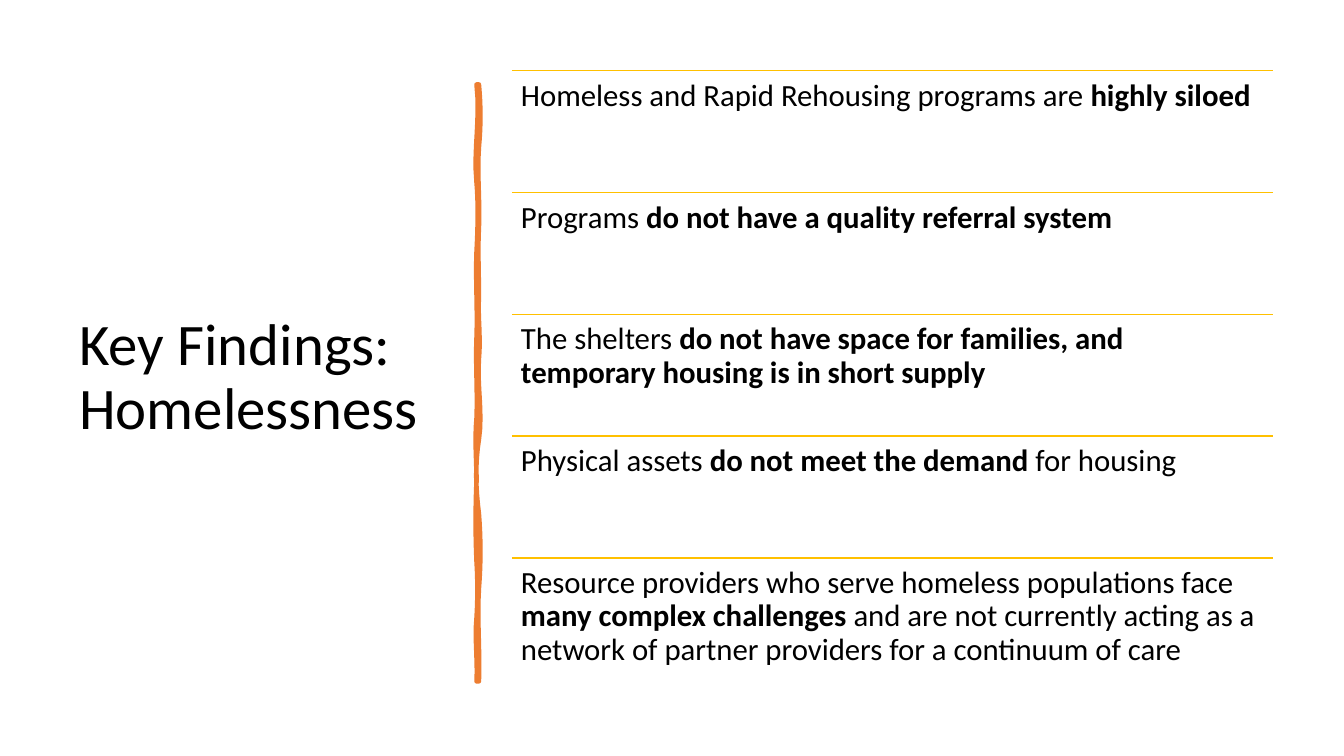
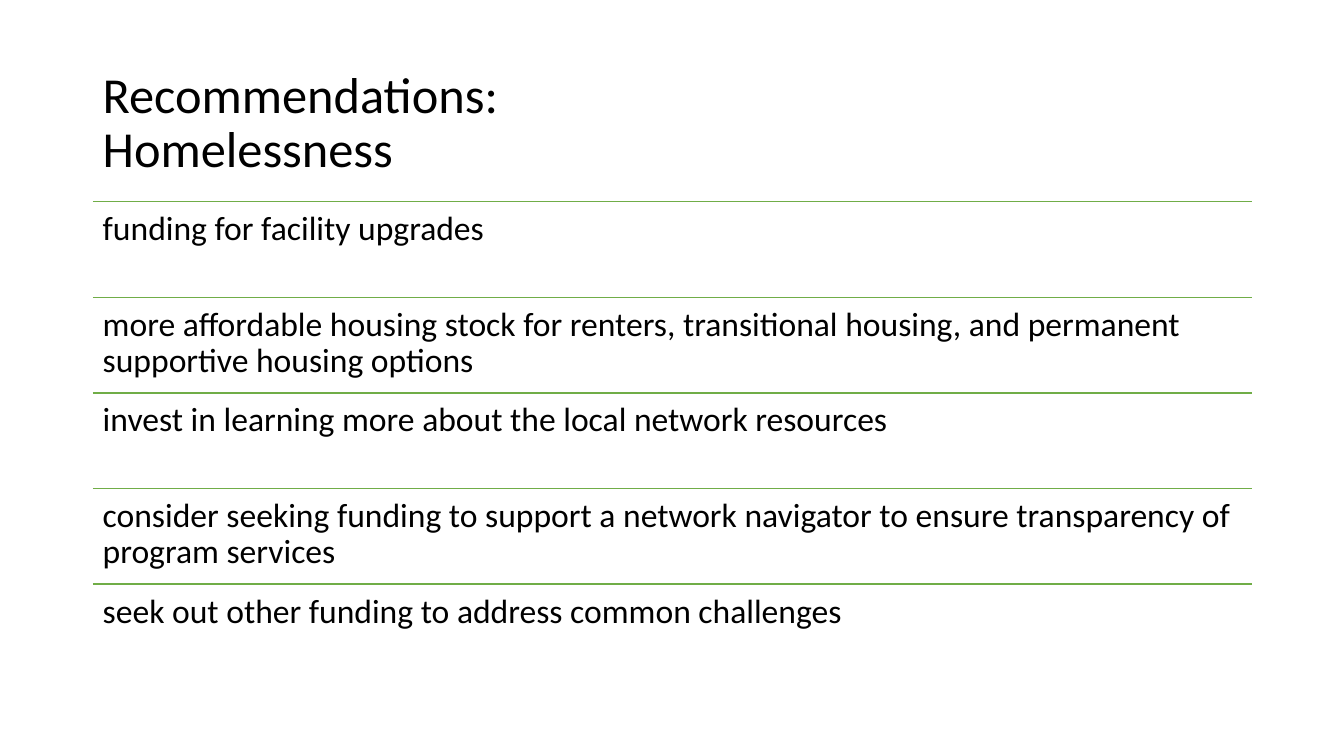
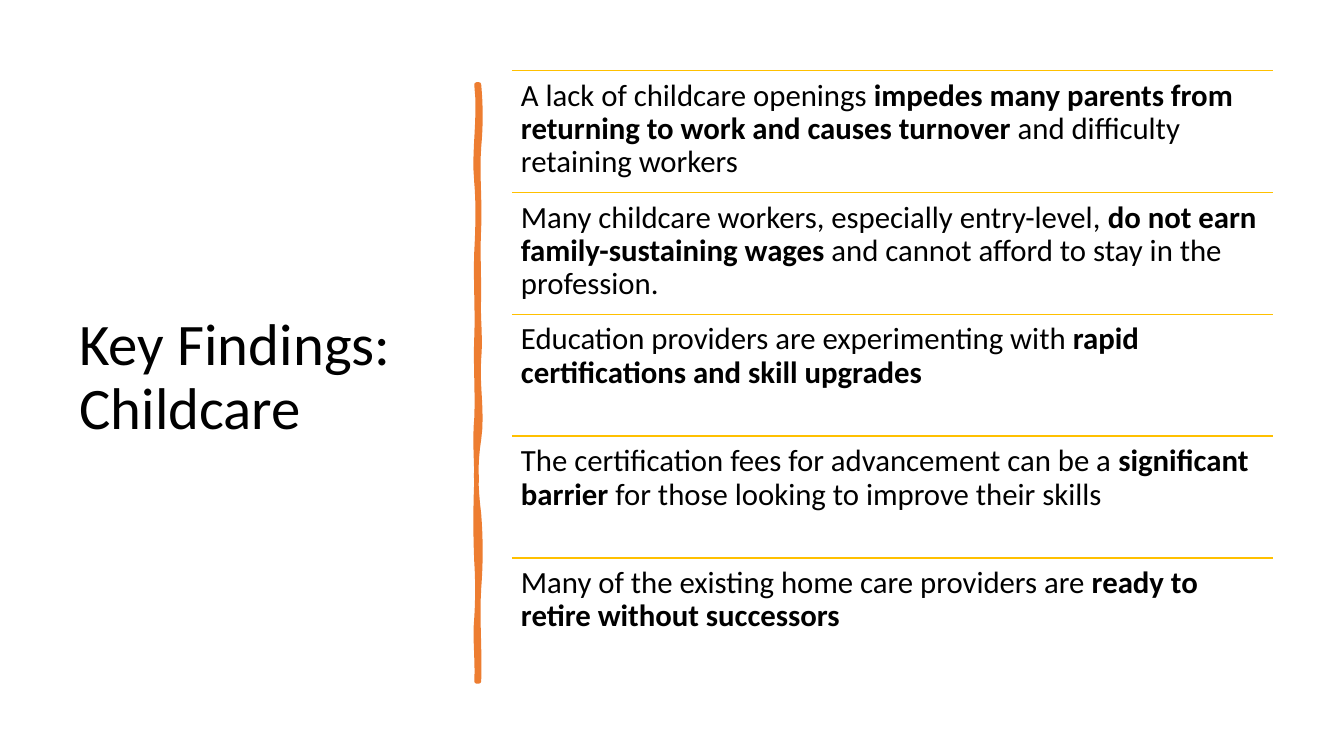
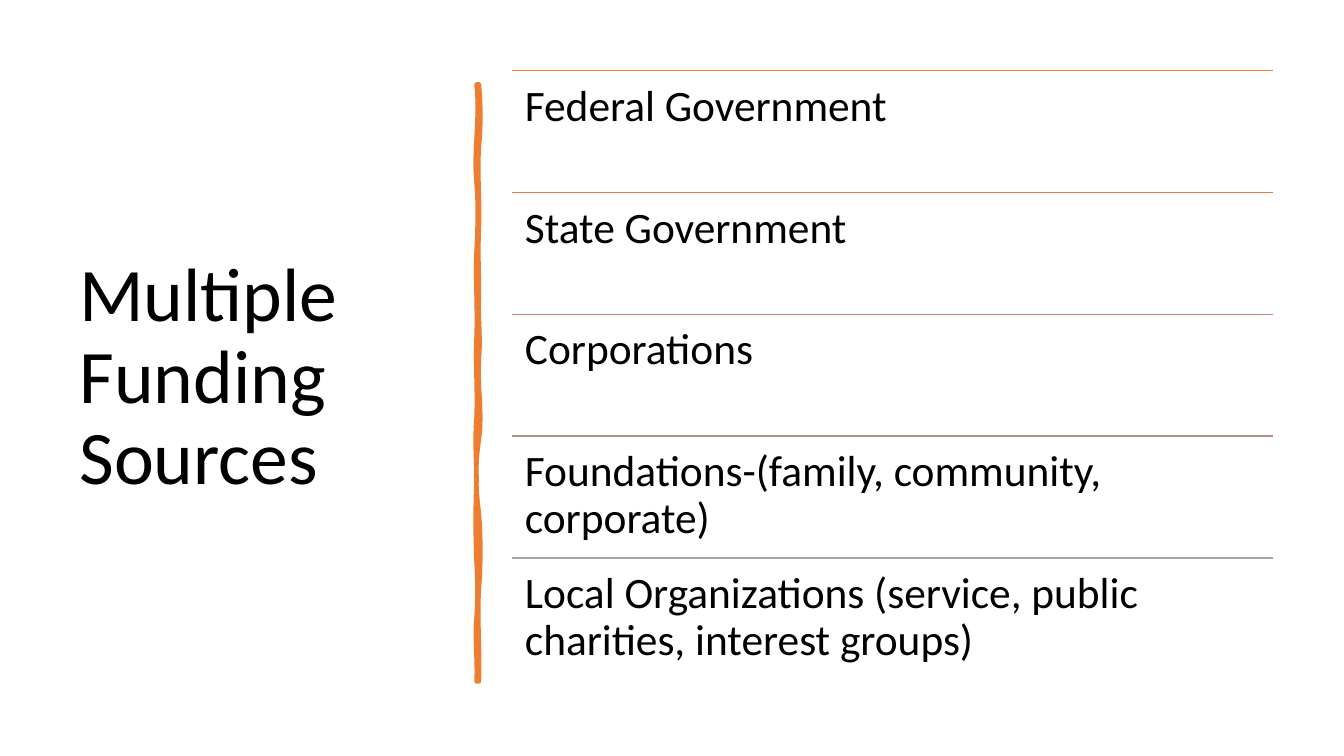
from pptx import Presentation
from pptx.dml.color import RGBColor
from pptx.enum.shapes import MSO_CONNECTOR
from pptx.enum.text import MSO_ANCHOR
from pptx.oxml.ns import qn
from pptx.util import Cm, Pt
from lxml.etree import SubElement

FONT, INK, ORANGE, GOLD, GREEN = "Calibri", "000000", "ED7D31", "FFC000", "70AD47"

# Lengths in centimetres; boxes are left, top, width, height
SIDE = dict(title=(1.75, 1.78, 9.5, 15.52), left=12.9, top=1.78,
            width=19.18, step=3.07, stripe=True)
FULL = dict(title=(2.34, 1.55, 29.21, 3.15), left=2.34, top=5.08,
            width=29.21, step=2.41, stripe=False)
FINDINGS = dict(SIDE, head=42, size=22, inset=0.23, lines=[GOLD] * 5)
ADVICE = dict(FULL, head=36, size=24, inset=0.25, lines=[GREEN] * 5)
SOURCES = dict(SIDE, head=54, size=31, inset=0.33,
               lines=[ORANGE, "D87A51", "C48170", "B4908B", "A5A5A5"])

# Each row alternates plain and bold text
SLIDES = [
    (FINDINGS, "Key Findings:\nHomelessness", [
        ("Homeless and Rapid Rehousing programs are ", "highly siloed"),
        ("Programs ", "do not have a quality referral system"),
        ("The shelters ", "do not have space for families, and temporary "
         "housing is in short supply"),
        ("Physical assets ", "do not meet the demand ", "for housing"),
        ("Resource providers who serve homeless populations face ",
         "many complex challenges ",
         "and are not currently acting as a network of partner providers "
         "for a continuum of care"),
    ]),
    (ADVICE, "Recommendations:\nHomelessness", [
        ("funding for facility upgrades",),
        ("more affordable housing stock for renters, transitional housing, "
         "and permanent supportive housing options",),
        ("invest in learning more about the local network resources",),
        ("consider seeking funding to support a network navigator to ensure "
         "transparency of program services",),
        ("seek out other funding to address common challenges",),
    ]),
    (FINDINGS, "Key Findings:\nChildcare", [
        ("A lack of childcare openings ",
         "impedes many parents from returning to work and causes turnover ",
         "and difficulty retaining workers"),
        ("Many childcare workers, especially entry-level, ",
         "do not earn family-sustaining wages ",
         "and cannot afford to stay in the profession."),
        ("Education providers are experimenting with ",
         "rapid certifications and skill upgrades"),
        ("The certification fees for advancement can be a ",
         "significant barrier ", "for those looking to improve their skills"),
        ("Many of the existing home care providers are ",
         "ready to retire without successors"),
    ]),
    (SOURCES, "Multiple Funding Sources", [
        ("Federal Government",),
        ("State Government",),
        ("Corporations",),
        ("Foundations-(family, community, corporate)",),
        ("Local Organizations (service, public charities, interest groups)",),
    ]),
]

# Stripe edges: x, first y, then waves of two sideways pulls and an end y
EDGES = [
    (12.07, 2.13, [(0.05, 0.05, 3.71), (-0.05, 0.03, 5.74), (-0.03, 0, 7.47),
                   (-0.03, 0.05, 9.04), (-0.05, 0.1, 11.07),
                   (-0.1, -0.08, 12.95), (0.05, 0.05, 14.83),
                   (-0.05, 0.03, 17.17)]),
    (12.01, 17.17, [(0.03, -0.05, 15.57), (0.03, 0.03, 14.15),
                    (-0.03, -0.03, 12.12), (0, -0.05, 10.54),
                    (0.03, -0.03, 8.51), (0.03, -0.03, 6.35),
                    (0.03, 0.05, 4.6), (-0.08, 0.1, 2.13)]),
]
STEPS = 8


def color(code):
    return RGBColor.from_string(code)


def add_text(slide, box, parts, size, inset=None, anchor=MSO_ANCHOR.TOP):
    frame = slide.shapes.add_textbox(*map(Cm, box)).text_frame
    frame.word_wrap = True
    frame.vertical_anchor = anchor
    if inset is not None:
        for side in ("left", "top", "right", "bottom"):
            setattr(frame, f"margin_{side}", Cm(inset))
    para = frame.paragraphs[0]
    para.line_spacing = 0.9
    for i, part in enumerate(parts):
        for j, line in enumerate(part.split("\n")):
            if j:
                para.add_line_break()
            run = para.add_run()
            run.text = line
            style = dict(name=FONT, size=Pt(size), bold=i % 2 == 1)
            for key, value in style.items():
                setattr(run.font, key, value)
            run.font.color.rgb = color(INK)


def add_rule(slide, left, top, width, code):
    rule = slide.shapes.add_connector(
        MSO_CONNECTOR.STRAIGHT, Cm(left), Cm(top), Cm(left + width), Cm(top))
    rule.line.color.rgb = color(code)
    rule.line.width = Pt(1)
    SubElement(rule.element.spPr, qn("a:effectLst"))


def trace(x, y, waves):
    """Return the points along one wavy edge."""
    points = [(Cm(x), Cm(y))]
    for pull, push, end in waves:
        for n in range(1, STEPS + 1):
            t = n / STEPS
            shift = 3 * t * (1 - t) * ((1 - t) * pull + t * push)
            points.append((Cm(x + shift), Cm(y + t * (end - y))))
        y = end
    return points


def add_stripe(slide):
    first, *rest = [point for edge in EDGES for point in trace(*edge)]
    pen = slide.shapes.build_freeform(*first)
    pen.add_line_segments(rest, close=True)
    stripe = pen.convert_to_shape()
    stripe.shadow.inherit = False
    stripe.fill.solid()
    stripe.fill.fore_color.rgb = color(ORANGE)
    stripe.line.color.rgb = color(ORANGE)
    stripe.line.width = Pt(3.25)
    SubElement(stripe.element.spPr.find(qn("a:ln")), qn("a:round"))


def add_slide(deck, look, title, rows):
    slide = deck.slides.add_slide(deck.slide_layouts[6])
    add_text(slide, look["title"], [title], look["head"],
             anchor=MSO_ANCHOR.MIDDLE)
    if look["stripe"]:
        add_stripe(slide)
    left, width, step = look["left"], look["width"], look["step"]
    for i, (parts, code) in enumerate(zip(rows, look["lines"])):
        top = look["top"] + i * step
        add_rule(slide, left, top, width, code)
        add_text(slide, (left, top, width, step), parts,
                 look["size"], look["inset"])


def main():
    deck = Presentation()
    deck.slide_width, deck.slide_height = Cm(33.87), Cm(19.05)
    for look, title, rows in SLIDES:
        add_slide(deck, look, title, rows)
    deck.save("out.pptx")


if __name__ == "__main__":
    main()
